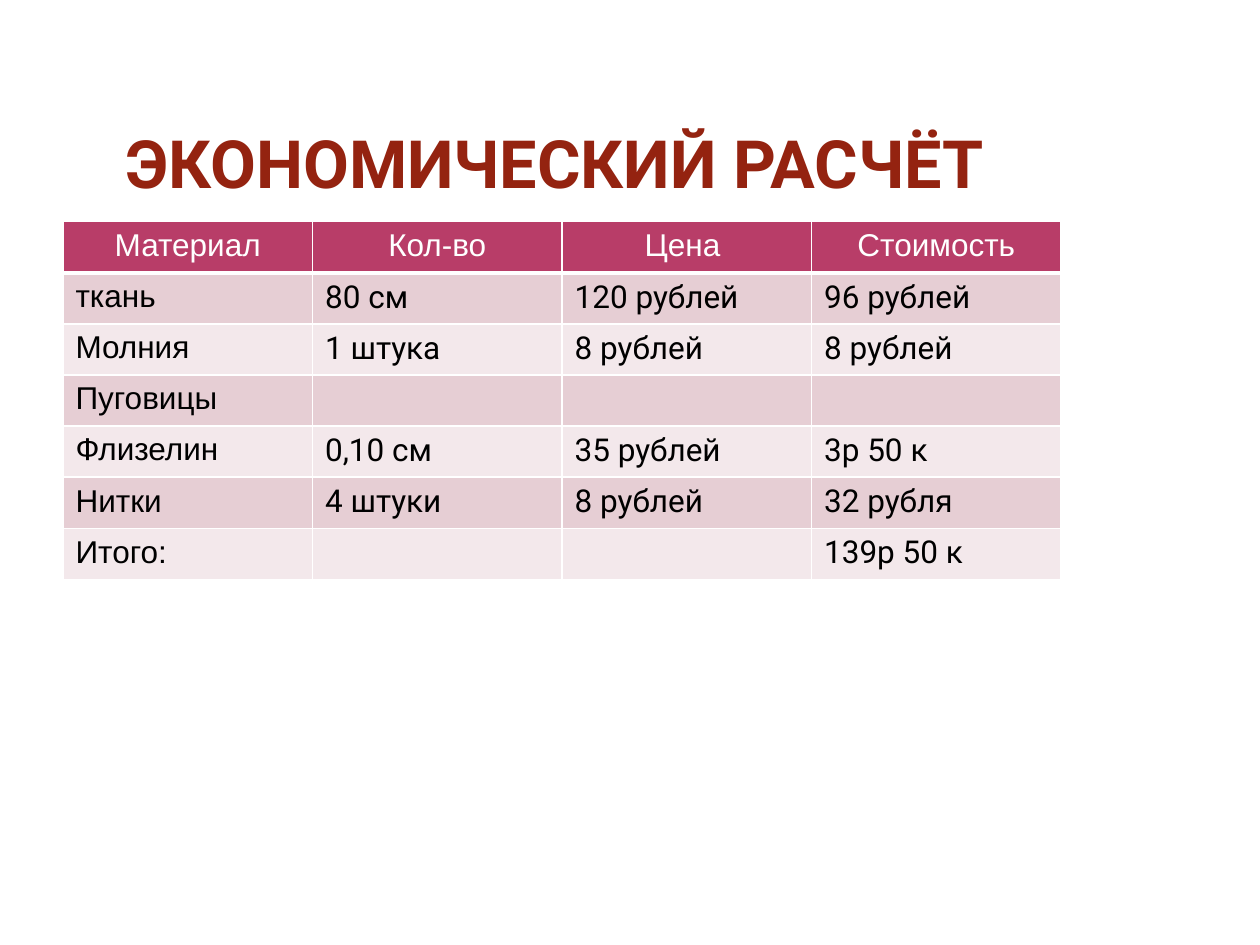
"""Build a slide with the cost calculation for sewing materials."""
import lxml.etree
import pptx
import pptx.dml.color
import pptx.enum.text
import pptx.oxml.ns
import pptx.util

HEADING = "ЭКОНОМИЧЕСКИЙ РАСЧЁТ "
COSTS = [
    ("Материал", "Кол-во", "Цена ", "Стоимость"),
    ("ткань", "80 см", "120 рублей", "96 рублей"),
    ("Молния", "1 штука", "8 рублей", "8 рублей"),
    ("Пуговицы", "", "", ""),
    ("Флизелин", "0,10 см", "35 рублей", "3р 50 к"),
    ("Нитки", "4 штуки", "8 рублей", "32 рубля"),
    ("Итого:", "", "", "139р 50 к"),
]
HEADER_FILL = "B83D68"
BAND_FILLS = ("F3E8EB", "E6CED4")
LEFT, WIDTH = 1.27, 20.12
TABLE_TOP, ROW_HEIGHT = 4.47, 1.03

Cm = pptx.util.Cm
CENTER = pptx.enum.text.PP_ALIGN.CENTER


def paint(color_format, hex_color):
    color_format.rgb = pptx.dml.color.RGBColor.from_string(hex_color)


def style(paragraph, font_name, size, hex_color, bold=False):
    for font in [paragraph.font] + [run.font for run in paragraph.runs]:
        font.name = font_name
        font.size = pptx.util.Pt(size)
        font.bold = bold
        paint(font.color, hex_color)


def add_borders(cell, bottom_width):
    qn = pptx.oxml.ns.qn
    properties = cell._tc.get_or_add_tcPr()
    for side, width in (("L", 1), ("R", 1), ("T", 1), ("B", bottom_width)):
        border = lxml.etree.SubElement(
            properties, qn(f"a:ln{side}"), w=str(pptx.util.Pt(width)))
        fill = lxml.etree.SubElement(border, qn("a:solidFill"))
        lxml.etree.SubElement(fill, qn("a:srgbClr"), val="FFFFFF")


def add_heading(slide):
    heading = slide.shapes.title
    heading.left, heading.top = Cm(LEFT), Cm(0.89)
    heading.width, heading.height = Cm(WIDTH), Cm(3.18)
    frame = heading.text_frame
    frame.text = HEADING
    frame.word_wrap = True
    frame.auto_size = pptx.enum.text.MSO_AUTO_SIZE.NONE
    frame.vertical_anchor = pptx.enum.text.MSO_ANCHOR.BOTTOM
    frame.margin_left = frame.margin_right = Cm(0.13)
    frame.margin_top = frame.margin_bottom = 0
    frame.paragraphs[0].alignment = CENTER
    style(frame.paragraphs[0], "Roboto", 38, "942310", bold=True)


def add_costs(slide):
    costs = slide.shapes.add_table(
        len(COSTS), len(COSTS[0]), Cm(LEFT), Cm(TABLE_TOP),
        Cm(WIDTH), Cm(ROW_HEIGHT * len(COSTS))).table
    for row_index, entries in enumerate(COSTS):
        is_header = row_index == 0
        for column_index, entry in enumerate(entries):
            cell = costs.cell(row_index, column_index)
            cell.text_frame.text = entry
            add_borders(cell, 3 if is_header else 1)
            cell.fill.solid()
            paint(cell.fill.fore_color,
                  HEADER_FILL if is_header else BAND_FILLS[row_index % 2])
            paragraph = cell.text_frame.paragraphs[0]
            if is_header:
                paragraph.alignment = CENTER
            style(paragraph,
                  "Arial" if is_header or column_index == 0 else "Roboto",
                  18, "FFFFFF" if is_header else "000000")


def main():
    presentation = pptx.Presentation()
    presentation.slide_width, presentation.slide_height = Cm(25.4), Cm(19.05)
    slide = presentation.slides.add_slide(presentation.slide_layouts[5])
    add_heading(slide)
    add_costs(slide)
    presentation.save("out.pptx")


if __name__ == "__main__":
    main()
